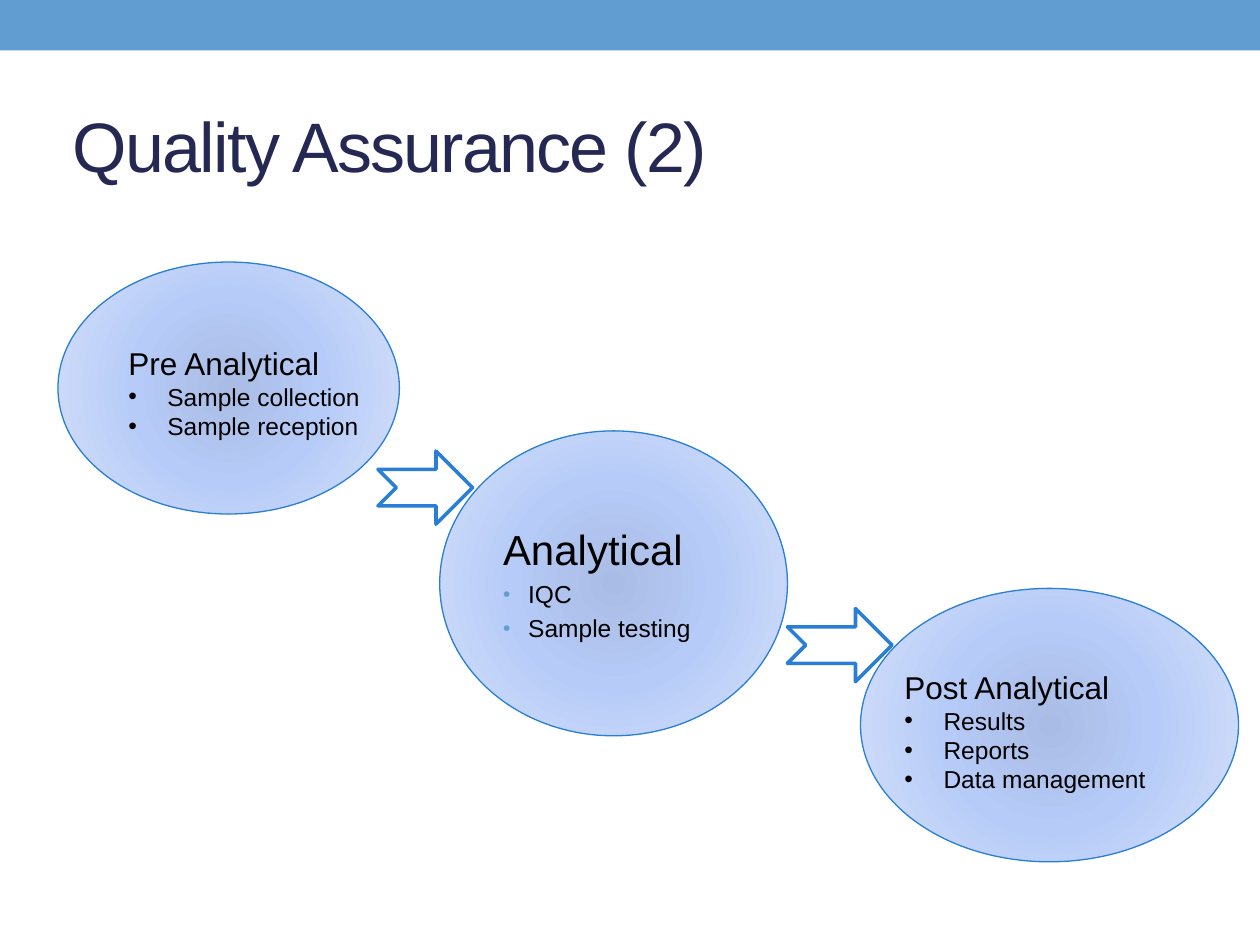
"""Build the Quality Assurance slide with its three analytical phases."""
from dataclasses import dataclass

from lxml import etree
from pptx import Presentation
from pptx.dml.color import RGBColor
from pptx.enum.shapes import MSO_SHAPE as SHAPE
from pptx.enum.text import MSO_ANCHOR as ANCHOR, MSO_AUTO_SIZE as AUTO, PP_ALIGN as ALIGN
from pptx.oxml import parse_xml
from pptx.oxml.ns import nsdecls, qn
from pptx.util import Inches, Pt


@dataclass(frozen=True)
class Theme:
    font: str = "Arial"
    band: str = "629DD1"
    title: str = "242852"
    text: str = "000000"
    line: str = "297FD5"
    arrow: str = "FFFFFF"
    gradient: tuple = ((0, "A9BCE5"), (45, "B6CBF7"), (100, "D7E2FB"))
    title_size: int = 40
    main_size: int = 24
    head_size: int = 18
    item_size: int = 14


class SlideBuilder:
    def __init__(self, slide, theme):
        self.s = slide
        self.theme = theme

    def shape(self, kind, box, fill=None, line_width=None):
        sp = self.s.shapes.add_shape(kind, *map(Inches, box))
        sp.shadow.inherit = False
        if fill:
            sp.fill.solid()
            sp.fill.fore_color.rgb = RGBColor.from_string(fill)
        if line_width:
            sp.line.color.rgb = RGBColor.from_string(self.theme.line)
            sp.line.width = Pt(line_width)
        else:
            sp.line.fill.background()
        return sp

    def ellipse(self, box):
        sp = self.shape(SHAPE.OVAL, box, line_width=0.75)
        stops = "".join(
            f'<a:gs pos="{pos * 1000}"><a:srgbClr val="{color}"/></a:gs>'
            for pos, color in self.theme.gradient
        )
        sp.fill.gradient()
        old = sp._element.spPr.find(qn("a:gradFill"))
        old.getparent().replace(old, parse_xml(
            f'<a:gradFill {nsdecls("a")} rotWithShape="1"><a:gsLst>{stops}</a:gsLst>'
            '<a:path path="circle"><a:fillToRect l="100000" t="100000" r="100000" b="100000"/>'
            '</a:path></a:gradFill>'
        ))
        return sp

    def arrow(self, box):
        return self.shape(SHAPE.NOTCHED_RIGHT_ARROW, box, self.theme.arrow, 2.08)

    def textbox(self, box):
        tf = self.s.shapes.add_textbox(*map(Inches, box)).text_frame
        tf.word_wrap = True
        return tf

    def style(self, p, size, color):
        p.alignment = ALIGN.LEFT
        font = p.runs[0].font
        font.name = self.theme.font
        font.size = Pt(size)
        font.color.rgb = RGBColor.from_string(color)

    def title(self, text, box):
        tf = self.textbox(box)
        tf.vertical_anchor = ANCHOR.MIDDLE
        tf.text = text
        p = tf.paragraphs[0]
        self.style(p, self.theme.title_size, self.theme.title)
        p.runs[0].font._element.set("spc", "-100")

    def spacing(self, p, percent):
        before = etree.SubElement(p._p.get_or_add_pPr(), qn("a:spcBef"))
        etree.SubElement(before, qn("a:spcPct")).set("val", str(percent * 1000))

    def bullet(self, p, indent, color=None):
        pPr = p._p.get_or_add_pPr()
        pPr.set("marL", str(Inches(indent)))
        pPr.set("indent", str(-Inches(indent)))
        if color:
            clr = etree.SubElement(pPr, qn("a:buClr"))
            etree.SubElement(clr, qn("a:srgbClr")).set("val", color)
            etree.SubElement(pPr, qn("a:buSzPct")).set("val", "85000")
        etree.SubElement(pPr, qn("a:buFont")).set("typeface", self.theme.font)
        etree.SubElement(pPr, qn("a:buChar")).set("char", "•")

    def phase(self, tf, heading, items, size, indent, before=0, bullet_color=None):
        tf.text = "\n".join([heading, *items])
        for i, p in enumerate(tf.paragraphs):
            self.style(p, self.theme.item_size if i else size, self.theme.text)
            if before:
                self.spacing(p, before)
            if i:
                self.bullet(p, indent, bullet_color)

    def label(self, box, heading, items):
        tf = self.textbox(box)
        tf.auto_size = AUTO.SHAPE_TO_FIT_TEXT
        self.phase(tf, heading, items, self.theme.head_size, 0.31)


def main():
    prs = Presentation()
    prs.slide_width, prs.slide_height = Inches(10), Inches(7.5)
    theme = Theme()
    b = SlideBuilder(prs.slides.add_slide(prs.slide_layouts[6]), theme)

    b.shape(SHAPE.RECTANGLE, (0, 0, 10, 0.4), theme.band)
    b.title("Quality Assurance (2)", (0.48, 0.61, 9, 1.08))

    b.ellipse((0.46, 2.08, 2.71, 2))
    tf = b.ellipse((3.49, 3.42, 2.76, 2.42)).text_frame
    tf.word_wrap = True
    tf.vertical_anchor = ANCHOR.MIDDLE
    b.phase(tf, "Analytical", ["IQC", "Sample testing"], theme.main_size, 0.2, 20, theme.band)
    b.ellipse((6.83, 4.67, 3, 2.17))

    b.label((0.92, 2.68, 2.08, 0.88), "Pre Analytical", ["Sample collection", "Sample reception"])
    b.label((7.08, 5.25, 2.35, 1.11), "Post Analytical", ["Results", "Reports", "Data management"])

    b.arrow((3, 3.58, 0.75, 0.58))
    b.arrow((6.25, 4.83, 0.83, 0.58))
    prs.save("out.pptx")


if __name__ == "__main__":
    main()
